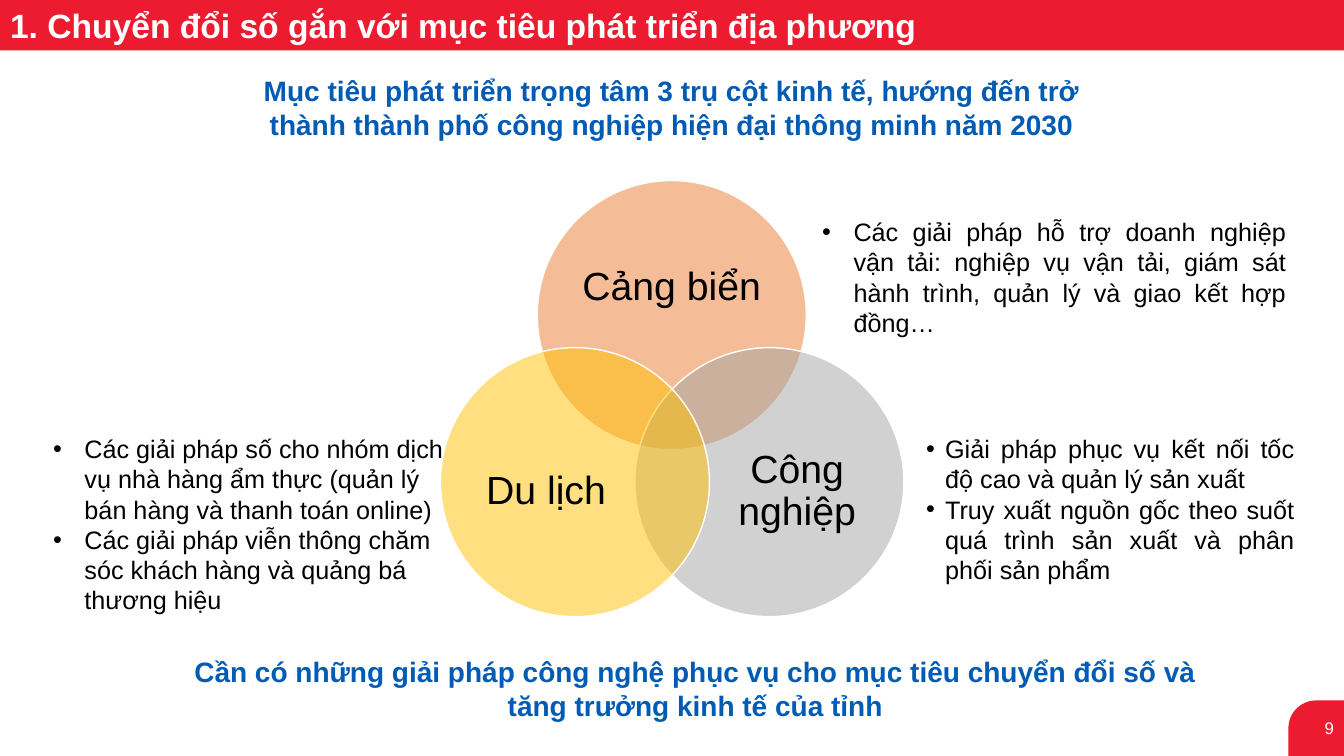
from lxml.etree import SubElement
from pptx import Presentation
from pptx.dml.color import RGBColor
from pptx.enum.shapes import MSO_SHAPE
from pptx.enum.text import MSO_ANCHOR, MSO_AUTO_SIZE, PP_ALIGN
from pptx.oxml.ns import qn
from pptx.util import Cm, Pt

RED = RGBColor(0xED, 0x1B, 0x2F)
BLUE = RGBColor(0x00, 0x5B, 0xB5)
ORANGE = RGBColor(0xED, 0x7D, 0x31)
GREY = RGBColor(0xA5, 0xA5, 0xA5)
YELLOW = RGBColor(0xFF, 0xC0, 0x00)
WHITE = RGBColor(0xFF, 0xFF, 0xFF)
BLACK = RGBColor(0x00, 0x00, 0x00)


def add_text(sp, *paragraphs, size=18, color=BLACK, bold=False, align=PP_ALIGN.LEFT,
             anchor=MSO_ANCHOR.TOP, wrap=True, indent=None, inset=None, spacing=None):
    """Fill a shape with paragraphs; an indent in cm makes them bulleted."""
    tf = sp.text_frame
    tf.word_wrap = wrap
    tf.auto_size = MSO_AUTO_SIZE.NONE
    tf.vertical_anchor = anchor
    if inset is not None:
        tf.margin_left = tf.margin_right = tf.margin_top = tf.margin_bottom = Cm(inset)
    for i, text in enumerate(paragraphs):
        p = tf.add_paragraph() if i else tf.paragraphs[0]
        p.alignment = align
        if spacing:
            p.line_spacing = spacing
        if indent:
            pPr = p._p.get_or_add_pPr()
            pPr.set("marL", str(Cm(indent)))
            pPr.set("indent", str(-Cm(indent)))
            SubElement(pPr, qn("a:buFont")).set("typeface", "Arial")
            SubElement(pPr, qn("a:buChar")).set("char", "•")
        r = p.add_run()
        r.text = text
        r.font.name = "Arial"
        r.font.size = Pt(size)
        r.font.bold = bold
        r.font.color.rgb = color


def add_shape(kind, left, top, width, height, fill):
    sp = shapes.add_shape(kind, Cm(left), Cm(top), Cm(width), Cm(height))
    sp.shadow.inherit = False
    sp.fill.solid()
    sp.fill.fore_color.rgb = fill
    sp.line.fill.background()
    return sp


prs = Presentation()
prs.slide_width, prs.slide_height = Cm(33.87), Cm(19.05)
slide = prs.slides.add_slide(prs.slide_layouts[5])
shapes = slide.shapes

# Page number corner and title bar
corner = add_shape(MSO_SHAPE.ROUND_1_RECTANGLE, 32.47, 17.65, 1.4, 1.4, RED)
corner.adjustments[0] = 0.5
corner._element.spPr.xfrm.set("flipH", "1")
add_text(corner, "9", size=12, color=WHITE, align=PP_ALIGN.RIGHT, anchor=MSO_ANCHOR.MIDDLE)
add_shape(MSO_SHAPE.RECTANGLE, 0, 0, 33.87, 1.27, RED)

title = shapes.title
title.left, title.top, title.width, title.height = Cm(0), Cm(0), Cm(23.55), Cm(1.27)
add_text(title, "1. Chuyển đổi số gắn với mục tiêu phát triển địa phương",
         size=24, color=WHITE, bold=True, anchor=MSO_ANCHOR.MIDDLE, wrap=False)
shapes._spTree.append(title._element)  # bring the title in front of its bar

# Blue statements above and below the diagram
statements = [
    (5.59, 1.73, 22.68, "Mục tiêu phát triển trọng tâm 3 trụ cột kinh tế, hướng đến trở "
                        "thành thành phố công nghiệp hiện đại thông minh năm 2030"),
    (4.01, 16.38, 27.03, "Cần có những giải pháp công nghệ phục vụ cho mục tiêu chuyển đổi số và "
                         "tăng trưởng kinh tế của tỉnh"),
]
for left, top, width, text in statements:
    box = shapes.add_textbox(Cm(left), Cm(top), Cm(width), Cm(1.96))
    add_text(box, text, size=20, color=BLUE, bold=True, align=PP_ALIGN.CENTER)

# Three overlapping circles, each followed by its label
DIAMETER = 6.78
pillars = [
    ("Cảng biển", ORANGE, 13.54, 4.55, (14.45, 5.72, 4.95, 3.05)),
    ("Công nghiệp", GREY, 16.0, 8.76, (18.06, 10.52, 4.06, 3.73)),
    ("Du lịch", YELLOW, 11.1, 8.76, (11.73, 10.52, 4.06, 3.73)),
]
for name, color, left, top, label_area in pillars:
    circle = add_shape(MSO_SHAPE.OVAL, left, top, DIAMETER, DIAMETER, color)
    circle.line.color.rgb = WHITE
    circle.line.width = Pt(1)
    srgb = circle._element.spPr.find(qn("a:solidFill")).find(qn("a:srgbClr"))
    SubElement(srgb, qn("a:alpha")).set("val", "50000")
    label = shapes.add_textbox(*map(Cm, label_area))
    add_text(label, name, size=28, align=PP_ALIGN.CENTER, anchor=MSO_ANCHOR.MIDDLE,
             inset=0, spacing=0.9)

# Solutions beside each pillar
solutions = [
    ((20.47, 5.33, 12.19, 3.33), 0.79, PP_ALIGN.JUSTIFY,
     ["Các giải pháp hỗ trợ doanh nghiệp vận tải: nghiệp vụ vận tải, giám sát "
      "hành trình, quản lý và giao kết hợp đồng…"]),
    ((23.09, 10.8, 9.78, 4.11), 0.48, PP_ALIGN.JUSTIFY,
     ["Giải pháp phục vụ kết nối tốc độ cao và quản lý sản xuất",
      "Truy xuất nguồn gốc theo suốt quá trình sản xuất và phân phối sản phẩm"]),
    ((1.09, 10.8, 10.69, 4.88), 0.79, PP_ALIGN.LEFT,
     ["Các giải pháp số cho nhóm dịch vụ nhà hàng ẩm thực (quản lý bán hàng và "
      "thanh toán online)",
      "Các giải pháp viễn thông chăm sóc khách hàng và quảng bá thương hiệu"]),
]
for area, indent, align, items in solutions:
    box = shapes.add_textbox(*map(Cm, area))
    add_text(box, *items, indent=indent, align=align)

prs.save("out.pptx")
